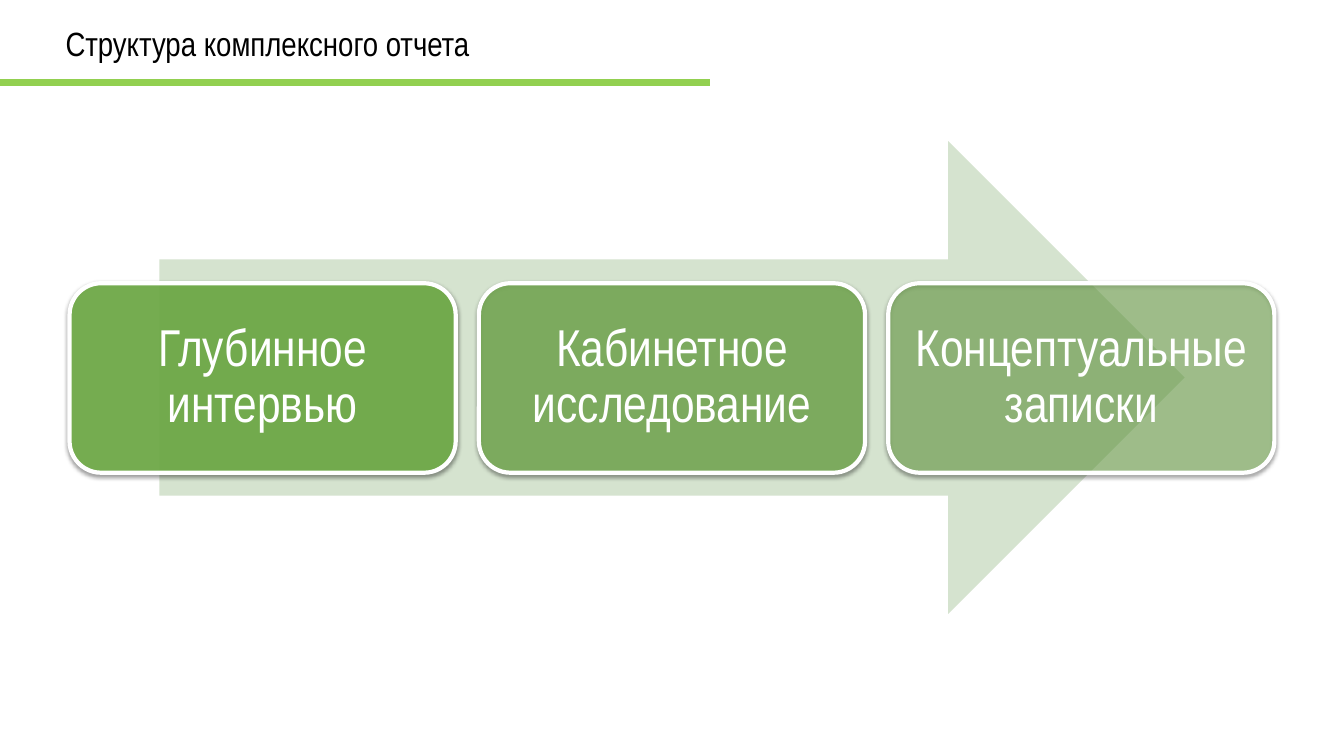
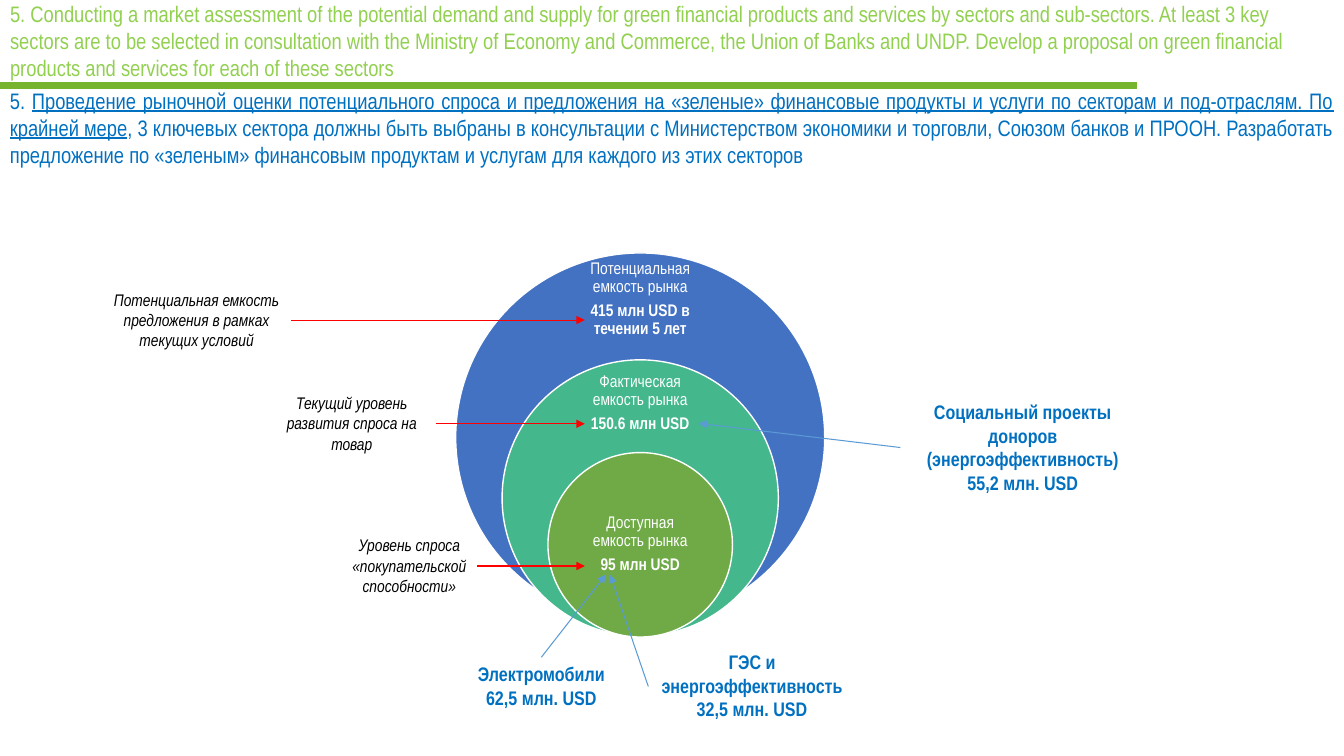
"""Two slides: report structure and market capacity for green finance."""
from lxml import etree
from pptx import Presentation
from pptx.dml.color import RGBColor as Rgb
from pptx.enum import shapes as sh, text as tx
from pptx.oxml.ns import qn
from pptx.util import Inches, Pt

FONT = "Arial Narrow"
BLACK, WHITE = Rgb(0, 0, 0), Rgb(255, 255, 255)
LIME, GREEN = Rgb(0x92, 0xD0, 0x50), Rgb(0x76, 0xB4, 0x30)
PALE, CARD = Rgb(0xD5, 0xE3, 0xCF), Rgb(0x70, 0xAD, 0x47)
BLUE, SKY = Rgb(0, 0x70, 0xC0), Rgb(0x5B, 0x9B, 0xD5)
RED = Rgb(255, 0, 0)
LEFT, MID = tx.PP_ALIGN.LEFT, tx.PP_ALIGN.CENTER
JUST = tx.PP_ALIGN.JUSTIFY
TOP, CORE = tx.MSO_ANCHOR.TOP, tx.MSO_ANCHOR.MIDDLE

CARDS = [("Глубинное интервью", 90), ("Кабинетное исследование", 70),
         ("Концептуальные записки", 50)]

ENGLISH = ("5. Conducting a market assessment of the potential demand and supply for green "
           "financial products and services by sectors and sub-sectors. At least 3 key sectors "
           "are to be selected in consultation with the Ministry of Economy and Commerce, the "
           "Union of Banks and UNDP. Develop a proposal on green financial products and services "
           "for each of these sectors")
RUSSIAN = [
    ("5. ", ""),
    ("Проведение рыночной оценки потенциального спроса и предложения на «зеленые» финансовые "
     "продукты и услуги по секторам и под-отраслям. По крайней мере", "u"),
    (", 3 ключевых сектора должны быть выбраны в консультации с Министерством экономики и "
     "торговли, Союзом банков и ПРООН. Разработать предложение по «зеленым» финансовым продуктам "
     "и услугам для каждого из этих секторов", "")]

AXIS = 6.35
RINGS = [
    (2.51, 3.66, Rgb(0x43, 0x72, 0xC3), 2.97, "Потенциальная емкость рынка",
     "415 млн USD в течении 5 лет"),
    (3.57, 2.74, Rgb(0x44, 0xB7, 0x8C), 4, "Фактическая емкость рынка", "150.6 млн USD"),
    (4.49, 1.83, Rgb(0x6F, 0xAA, 0x47), 5.4, "Доступная емкость рынка", "95 млн USD")]
NOTES = [
    ("Потенциальная емкость предложения в рамках текущих условий", (1.01, 2.82, 1.88, 0.71)),
    ("Текущий уровень развития спроса на товар", (2.66, 3.85, 1.66, 0.71)),
    ("Уровень спроса «покупательской способности»", (3.39, 5.26, 1.34, 0.71))]
SUMS = [
    ("Электромобили 62,5 млн. USD", (4.62, 6.52, 1.5, 0.57), (5.37, 6.52), (6.01, 5.7)),
    ("ГЭС и энергоэффективность 32,5 млн. USD", (6.43, 6.4, 2.06, 0.81),
     (6.43, 6.81), (6.05, 5.7)),
    ("Социальный проекты доноров (энергоэффективность) 55,2 млн. USD",
     (8.93, 3.92, 2.43, 1.04), (8.93, 4.44), (6.93, 4.2))]


def write(frame, paras, size, color, align=LEFT, anchor=TOP, pad=(0.1, 0.05),
          lead=None, gap=0):
    """Fill a frame; each paragraph is a list of (text, marks) with marks from b, i, u."""
    frame.word_wrap, frame.auto_size = True, tx.MSO_AUTO_SIZE.NONE
    frame.vertical_anchor = anchor
    frame.margin_left = frame.margin_right = Inches(pad[0])
    frame.margin_top = frame.margin_bottom = Inches(pad[1])
    for n, runs in enumerate(paras):
        para = frame.add_paragraph() if n else frame.paragraphs[0]
        para.alignment, para.space_before = align, Pt(gap if n else 0)
        para.line_spacing = lead or 1.0
        for words, marks in runs:
            run = para.add_run()
            run.text, font = words, run.font
            font.name, font.size, font.color.rgb = FONT, Pt(size), color
            font.bold, font.italic, font.underline = ("b" in marks, "i" in marks, "u" in marks)


def label(slide, box, paras, *args, **style):
    item = slide.shapes.add_textbox(*map(Inches, box))
    write(item.text_frame, paras, *args, **style)


def form(slide, kind, box, fill, edge=0):
    item = slide.shapes.add_shape(kind, *map(Inches, box))
    item.shadow.inherit = False
    item.fill.solid()
    item.fill.fore_color.rgb = fill
    if edge:
        item.line.color.rgb, item.line.width = WHITE, Pt(edge)
    else:
        item.line.fill.background()
    return item


def line(slide, start, end, color, width, head=False):
    item = slide.shapes.add_connector(sh.MSO_CONNECTOR.STRAIGHT, *map(Inches, start + end))
    item.line.color.rgb, item.line.width = color, Pt(width)
    if head:
        etree.SubElement(item.line._get_or_add_ln(), qn("a:tailEnd"), type="triangle")
    etree.SubElement(item._element.spPr, qn("a:effectLst"))


def page(deck, title, box, size, color, anchor, pad, rule):
    slide = deck.slides.add_slide(deck.slide_layouts[5])
    head = slide.shapes.title
    head.left, head.top, head.width, head.height = map(Inches, box)
    write(head.text_frame, [[(title, "")]], size, color, anchor=anchor, pad=pad)
    end, level, tint = rule
    line(slide, (0, level), (end, level), tint, 5.25)
    return slide


def glaze(item, alpha):
    """Make a card see-through and give it a soft drop shadow."""
    spot = item._element.spPr
    tone = spot.find(qn("a:solidFill")).find(qn("a:srgbClr"))
    etree.SubElement(tone, qn("a:alpha"), val=str(alpha * 1000))
    drop = etree.SubElement(spot.find(qn("a:effectLst")), qn("a:outerShdw"), blurRad="40000",
                            dist="20000", dir="5400000", rotWithShape="0")
    ink = etree.SubElement(drop, qn("a:srgbClr"), val="000000")
    etree.SubElement(ink, qn("a:alpha"), val="38000")


def report(deck):
    slide = page(deck, "Структура комплексного отчета", (0.55, 0.18, 10.29, 0.5), 24, BLACK,
                 TOP, (0.1, 0.05), (7.04, 0.82, LIME))
    form(slide, sh.MSO_SHAPE.RIGHT_ARROW, (1.58, 1.4, 10.17, 4.69), PALE)
    for n, (words, alpha) in enumerate(CARDS):
        left = 0.69 + n * 4.06
        card = form(slide, sh.MSO_SHAPE.ROUNDED_RECTANGLE, (left, 2.81, 3.83, 1.88), CARD, 3)
        glaze(card, alpha)
        label(slide, (left + 0.09, 2.9, 3.65, 1.69), [[(words, "")]], 37, WHITE, MID, CORE,
              (0.15, 0.15), 0.9)


def market(deck):
    slide = page(deck, ENGLISH, (0, 0, 13.33, 0.8), 16, LIME, TOP, (0.1, 0),
                 (11.28, 0.85, GREEN))
    label(slide, (0, 0.99, 13.33, 0.55), [RUSSIAN], 16, BLUE, JUST, CORE)
    for top, size, fill, mid, name, total in RINGS:
        form(slide, sh.MSO_SHAPE.OVAL, (AXIS - size / 2, top, size, size), fill, 1)
        label(slide, (AXIS - 0.64, mid - 0.3, 1.28, 0.6), [[(name, "")], [(total, "b")]],
              12, WHITE, MID, CORE, (0.09, 0.09), 0.9, 4.2)
    for words, box in NOTES:
        left, top, wide, high = box
        level = top + high / 2
        label(slide, box, [[(words, "i")]], 12, BLACK, MID)
        line(slide, (left + wide, level), (5.8, level), RED, 0.75, True)
    for words, box, start, end in SUMS:
        label(slide, box, [[(words, "b")]], 14, BLUE, MID)
        line(slide, start, end, SKY, 0.75, True)


def main():
    deck = Presentation()
    deck.slide_width, deck.slide_height = Inches(13.33), Inches(7.5)
    report(deck)
    market(deck)
    deck.save("out.pptx")


if __name__ == "__main__":
    main()
